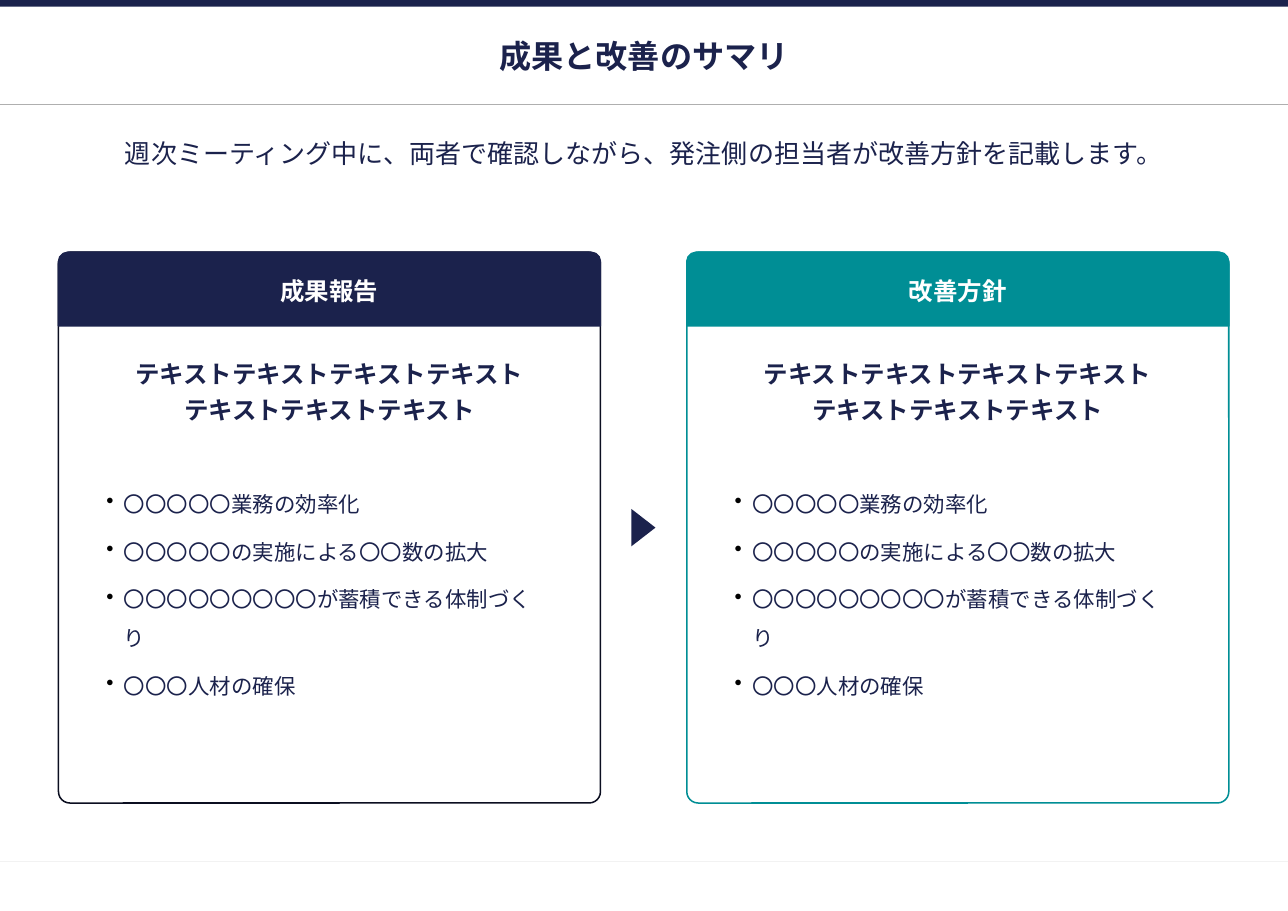
from dataclasses import dataclass

from lxml import etree
from pptx import Presentation
from pptx.dml.color import RGBColor
from pptx.enum.lang import MSO_LANGUAGE_ID
from pptx.enum.shapes import MSO_CONNECTOR, MSO_SHAPE
from pptx.enum.text import MSO_ANCHOR, PP_ALIGN
from pptx.oxml.ns import qn
from pptx.util import Pt

RECT, TRIANGLE = MSO_SHAPE.RECTANGLE, MSO_SHAPE.ISOSCELES_TRIANGLE
ROUNDED, TOP_ROUNDED = MSO_SHAPE.ROUNDED_RECTANGLE, MSO_SHAPE.ROUND_2_SAME_RECTANGLE
STRAIGHT = MSO_CONNECTOR.STRAIGHT
TOP, MIDDLE = MSO_ANCHOR.TOP, MSO_ANCHOR.MIDDLE
LEFT, CENTER = PP_ALIGN.LEFT, PP_ALIGN.CENTER
JAPANESE = MSO_LANGUAGE_ID.JAPANESE

SLIDE_W, SLIDE_H = 841.68, 595.44
MARGIN = 38.2
CARD_TOP, CARD_W, CARD_H, HEADER_H = 164.9, 354.2, 360, 48.2
CARD_STEP = 410.6
LIST_INSET, LIST_TOP, LIST_W, LIST_H = 28.4, 309.6, 297.4, 184.3


@dataclass(frozen=True)
class Theme:
    font: str = "Noto Sans CJK JP"
    navy: str = "1B224C"
    dark: str = "0B0E20"
    teal: str = "008E95"
    white: str = "FFFFFF"
    black: str = "000000"
    rule: str = "AFAFAF"
    faint_rule: str = "F2F2F2"
    title: float = 21
    lead: float = 17
    heading: float = 16
    body: float = 14


class SlideBuilder:
    def __init__(self, slide, theme):
        self.shapes = slide.shapes
        self.theme = theme

    def rule(self, y, color):
        line = self.shapes.add_connector(STRAIGHT, 0, Pt(y), Pt(SLIDE_W), Pt(y))
        line.line.color.rgb = RGBColor.from_string(color)
        line.line.width = Pt(0.75)
        etree.SubElement(line._element.spPr, qn("a:effectLst"))

    def shape(self, kind, box, fill, outline=None, adjustments=()):
        shape = self.shapes.add_shape(kind, *map(Pt, box))
        shape.shadow.inherit = False
        shape.fill.solid()
        shape.fill.fore_color.rgb = RGBColor.from_string(fill)
        if outline:
            shape.line.color.rgb = RGBColor.from_string(outline)
            shape.line.width = Pt(1)
        else:
            shape.line.fill.background()
        for index, value in enumerate(adjustments):
            shape.adjustments[index] = value
        return shape

    def text_box(self, box):
        return self.shapes.add_textbox(*map(Pt, box))

    def add_text(self, shape, lines, size, color=None, bold=False, align=CENTER,
                 anchor=TOP, insets=(2.9, 2.9, 2.9, 2.9), gap=0, bulleted=False):
        """Fill a shape with one paragraph per line, gap points apart."""
        frame = shape.text_frame
        frame.word_wrap = True
        frame.vertical_anchor = anchor
        (frame.margin_left, frame.margin_top,
         frame.margin_right, frame.margin_bottom) = map(Pt, insets)
        for index, line in enumerate(lines):
            paragraph = frame.add_paragraph() if index else frame.paragraphs[0]
            paragraph.alignment = align
            if index:
                paragraph.space_before = Pt(gap)
            if bulleted:
                self.bullet(paragraph)
            run = paragraph.add_run()
            run.text = line
            font = run.font
            font.size, font.bold, font.name = Pt(size), bold, self.theme.font
            font.language_id = JAPANESE
            font.color.rgb = RGBColor.from_string(color or self.theme.navy)
            etree.SubElement(run._r.get_or_add_rPr(), qn("a:ea"), typeface=self.theme.font)

    def bullet(self, paragraph):
        paragraph.line_spacing = 1.5
        properties = paragraph._p.get_or_add_pPr()
        properties.set("marL", str(Pt(11.5)))
        properties.set("indent", str(-Pt(11.5)))
        bullet_color = etree.SubElement(properties, qn("a:buClr"))
        etree.SubElement(bullet_color, qn("a:srgbClr"), val=self.theme.black)
        etree.SubElement(properties, qn("a:buChar"), char="•")

    def card(self, left, heading, color, outline, summary, points):
        theme = self.theme
        panel = self.shape(ROUNDED, (left, CARD_TOP, CARD_W, CARD_H),
                           theme.white, outline, [0.021])
        self.add_text(panel, summary, theme.heading, bold=True,
                      insets=(5.7, 67.7, 5.7, 5.7), gap=4)
        header = self.shape(TOP_ROUNDED, (left, CARD_TOP, CARD_W, HEADER_H),
                            color, color, [0.128, 0])
        self.add_text(header, [heading], theme.heading, theme.white, bold=True,
                      anchor=MIDDLE, insets=(7.2, 3.6, 7.2, 3.6))
        point_list = self.text_box((left + LIST_INSET, LIST_TOP, LIST_W, LIST_H))
        self.add_text(point_list, points, theme.body, align=LEFT, gap=6, bulleted=True)


def main():
    deck = Presentation()
    deck.slide_width, deck.slide_height = Pt(SLIDE_W), Pt(SLIDE_H)
    theme = Theme()
    page = SlideBuilder(deck.slides.add_slide(deck.slide_layouts[6]), theme)

    page.rule(563, theme.faint_rule)
    page.shape(RECT, (0, 0, SLIDE_W, 4.3), theme.navy)
    page.rule(68.4, theme.rule)

    content_w = SLIDE_W - 2 * MARGIN
    title = page.text_box((MARGIN, 23, content_w, 28.1))
    page.add_text(title, ["成果と改善のサマリ"], theme.title, bold=True,
                  anchor=MIDDLE, insets=(2.9, 2.9, 2.9, 4.3))
    lead = page.text_box((MARGIN, 87.1, content_w, 59))
    page.add_text(lead, ["週次ミーティング中に、両者で確認しながら、発注側の担当者が改善方針を記載します。"],
                  theme.lead)

    summary = ["テキストテキストテキストテキスト", "テキストテキストテキスト"]
    points = [
        "〇〇〇〇〇業務の効率化",
        "〇〇〇〇〇の実施による〇〇数の拡大",
        "〇〇〇〇〇〇〇〇〇が蓄積できる体制づくり",
        "〇〇〇人材の確保",
    ]
    cards = [("成果報告", theme.navy, theme.dark), ("改善方針", theme.teal, theme.teal)]
    for index, (heading, color, outline) in enumerate(cards):
        page.card(MARGIN + index * CARD_STEP, heading, color, outline, summary, points)

    arrow = page.shape(TRIANGLE, (408.2, 337, 24.5, 15.8), theme.navy)
    arrow.rotation = 90

    deck.save("out.pptx")


if __name__ == "__main__":
    main()
